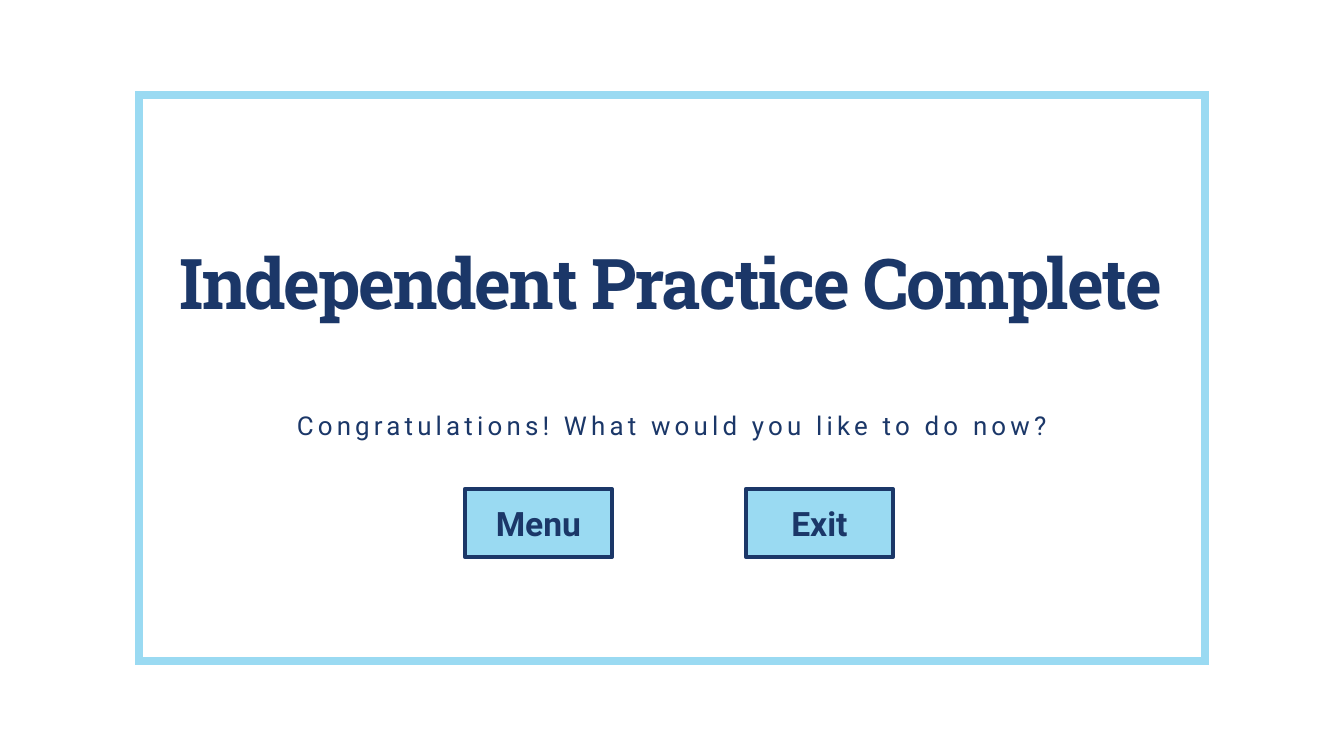
from dataclasses import dataclass

from lxml import etree
from pptx import Presentation
from pptx.dml.color import RGBColor
from pptx.enum.shapes import MSO_SHAPE
from pptx.enum.text import MSO_ANCHOR, MSO_AUTO_SIZE, PP_ALIGN
from pptx.oxml.ns import qn
from pptx.util import Pt

PX = 914400 / 100.8
RECT = MSO_SHAPE.RECTANGLE
TOP, MIDDLE = MSO_ANCHOR.TOP, MSO_ANCHOR.MIDDLE
CENTER = PP_ALIGN.CENTER
TITLE_ONLY = 5


@dataclass(frozen=True)
class Theme:
    navy: RGBColor = RGBColor(0x1B, 0x37, 0x68)
    sky: RGBColor = RGBColor(0x9A, 0xDA, 0xF2)
    white: RGBColor = RGBColor(0xFF, 0xFF, 0xFF)
    slab: str = "Roboto Slab"
    sans: str = "Roboto"
    head: float = 50
    body: float = 18.5
    label: float = 24


THEME = Theme()


def emu(*sizes):
    return [round(size * PX) for size in sizes]


def place(shape, box):
    shape.left, shape.top, shape.width, shape.height = emu(*box)


def write(shape, text, face, size, bold=False, anchor=TOP, lead=1.0, track=0, inset=5):
    frame = shape.text_frame
    frame.word_wrap = True
    frame.auto_size = MSO_AUTO_SIZE.NONE
    frame.vertical_anchor = anchor
    frame.margin_top, frame.margin_bottom = emu(inset, inset)
    para = frame.paragraphs[0]
    para.alignment = CENTER
    para.line_spacing = lead
    font = para.font
    font.name, font.size, font.bold = face, Pt(size), bold
    font.color.rgb = THEME.navy
    run = para.add_run()
    run.text = text
    if track:
        run._r.get_or_add_rPr().set("spc", str(round(track * 100)))


def draw_rect(slide, box, line, width, fill=None):
    shape = slide.shapes.add_shape(RECT, *emu(*box))
    shape.shadow.inherit = False
    shape.line.color.rgb = line
    shape.line.width = Pt(width)
    if fill is None:
        shape.fill.background()
    else:
        shape.fill.solid()
        shape.fill.fore_color.rgb = fill
    return shape


def draw_frame(slide, box):
    frame = draw_rect(slide, box, THEME.sky, 6)
    join = etree.SubElement(frame.line._get_or_add_ln(), qn("a:miter"))
    join.set("lim", "800000")


def draw_title(slide, box, text):
    title = slide.shapes.title
    place(title, box)
    write(title, text, THEME.slab, THEME.head, bold=True, lead=0.9, track=-1.5, inset=0)


def draw_prompt(slide, box, text):
    prompt = slide.shapes.add_textbox(*emu(*box))
    write(prompt, text, THEME.sans, THEME.body, lead=0.9, track=3)


def draw_buttons(slide, box, labels):
    left, top, width, height = box
    wide = 147
    step = (width - wide) // (len(labels) - 1)
    for i, label in enumerate(labels):
        spot = (left + i * step, top, wide, height)
        button = draw_rect(slide, spot, THEME.navy, 3, THEME.sky)
        write(button, label, THEME.sans, THEME.label, bold=True, anchor=MIDDLE)


def draw_finish(slide, box):
    left, top, width, height = box
    slide.background.fill.solid()
    slide.background.fill.fore_color.rgb = THEME.white
    draw_frame(slide, box)
    draw_title(slide, (left + 27, top + 154, width - 55, 98), "Independent Practice Complete")
    draw_prompt(
        slide,
        (left + 126, top + 313, width - 252, 47),
        "Congratulations! What would you like to do now?",
    )
    draw_buttons(slide, (left + 326, top + 394, 428, 68), ("Menu", "Exit"))


def main():
    deck = Presentation()
    deck.slide_width, deck.slide_height = emu(1344, 756)
    slide = deck.slides.add_slide(deck.slide_layouts[TITLE_ONLY])
    draw_finish(slide, (139, 95, 1066, 566))
    deck.save("out.pptx")


if __name__ == "__main__":
    main()
